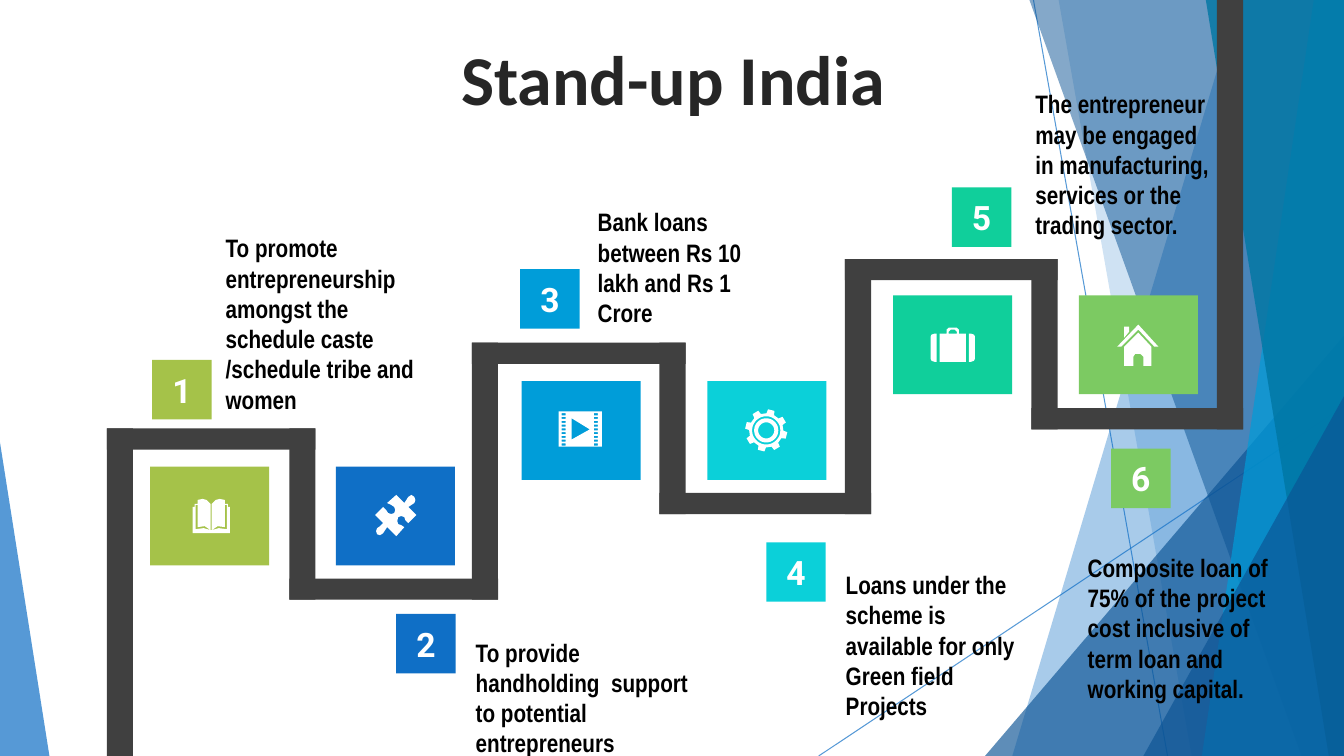
from math import cos, radians, sin

from lxml.etree import SubElement
from pptx import Presentation
from pptx.dml.color import RGBColor
from pptx.enum.shapes import MSO_CONNECTOR, MSO_SHAPE
from pptx.enum.text import MSO_ANCHOR, PP_ALIGN
from pptx.oxml.ns import qn
from pptx.util import Inches, Pt

BLUE = RGBColor(0x0F, 0x6F, 0xC6)
NAVY = RGBColor(0x0B, 0x53, 0x94)
SKY = RGBColor(0x00, 0x9D, 0xD9)
TEAL = RGBColor(0x00, 0x76, 0xA3)
LIME = RGBColor(0xA5, 0xC2, 0x49)
AQUA = RGBColor(0x0B, 0xD0, 0xD9)
MINT = RGBColor(0x10, 0xCF, 0x9B)
GREEN = RGBColor(0x7C, 0xCA, 0x62)
GRAY = RGBColor(0x40, 0x40, 0x40)
INK = RGBColor(0x26, 0x26, 0x26)
BLACK = RGBColor(0, 0, 0)
WHITE = RGBColor(255, 255, 255)

WIDE, HIGH = 13.33, 7.5
deck = Presentation()
deck.slide_width, deck.slide_height = Inches(WIDE), Inches(HIGH)
slide = deck.slides.add_slide(deck.slide_layouts[6])
shapes = slide.shapes


def paint(shape, color, alpha=100):
    shape.shadow.inherit = False
    shape.fill.solid()
    shape.fill.fore_color.rgb = color
    shape.line.fill.background()
    if alpha < 100:
        tint = shape.element.spPr.find(qn("a:solidFill"))[0]
        SubElement(tint, qn("a:alpha"), val=str(alpha * 1000))


def trace(loops, color, alpha=100):
    pen = None
    for loop in loops:
        dots = [(x * 1000, y * 1000) for x, y in loop]
        if pen:
            pen.move_to(*dots[0])
        else:
            pen = shapes.build_freeform(*dots[0], scale=Inches(1) / 1000)
        pen.add_line_segments(dots[1:], close=True)
    paint(pen.convert_to_shape(), color, alpha)


for ends in [(10.25, 0, 11.58, HIGH), (WIDE, 4.03, 8.12, HIGH)]:
    ray = shapes.add_connector(MSO_CONNECTOR.STRAIGHT, *map(Inches, ends))
    ray.line.color.rgb = BLUE
    ray.line.width = Pt(0.75)
    props = ray.element.spPr
    SubElement(props.find(qn("a:ln")).find(qn("a:solidFill"))[0], qn("a:alpha"), val="70000")
    SubElement(props, qn("a:effectLst"))

for top, base, color, alpha in [
    (12.28, 10.04, BLUE, 36),
    (10.5, 11.82, BLUE, 20),
    ((9.77, 3.33, 3.56, 4.17), 1, NAVY, 66),
    (10.21, 12.91, NAVY, 50),
    (13.03, 11.92, SKY, 70),
    (11.96, 13.18, TEAL, 80),
    ((11.34, 3.93, 1.99, 3.57), 1, NAVY, 66),
    ((0, 4.39, 0.49, 3.11), 0, BLUE, 70),
]:
    if isinstance(top, tuple):
        wedge = shapes.add_shape(MSO_SHAPE.ISOSCELES_TRIANGLE, *map(Inches, top))
        wedge.adjustments[0] = base
        paint(wedge, color, alpha)
    else:
        trace([[(top, 0), (WIDE, 0), (WIDE, HIGH), (base, HIGH)]], color, alpha)

THICK, POST = 0.21, 0.26
posts = [1.06, 2.87, 4.68, 6.54, 8.38, 10.23, 12.07]
floors = [HIGH - THICK, 4.25, 5.74, 3.4, 4.89, 2.57, 4.05, 0]
bars = [(x, min(a, b), POST, abs(a - b) + THICK) for x, a, b in zip(posts, floors, floors[1:])]
bars += [(a, y, b - a + POST, THICK) for a, b, y in zip(posts, posts[1:], floors[1:])]
for bar in bars:
    paint(shapes.add_shape(MSO_SHAPE.RECTANGLE, *map(Inches, bar)), GRAY)

steps = [
    (LIME, 1.51, 3.57, (2.14, 2.26, 2.07, 1.92),
     "To promote entrepreneurship amongst the schedule caste /schedule tribe and women"),
    (BLUE, 3.93, 6.09, (4.62, 6.27, 2.51, 1.31),
     "To provide handholding  support to potential entrepreneurs"),
    (SKY, 5.16, 2.67, (5.83, 2, 2.06, 1.31),
     "Bank loans between Rs 10 lakh and Rs 1 Crore"),
    (AQUA, 7.6, 5.38, (8.29, 5.6, 2.07, 1.61),
     "Loans under the scheme is available for only Green field Projects"),
    (MINT, 9.44, 1.86, (10.17, 0.83, 1.98, 1.62),
     "The entrepreneur may be engaged in manufacturing, services or the trading sector."),
    (GREEN, 11.02, 4.45, (10.69, 5.43, 2.07, 1.61),
     "Composite loan of 75% of the project cost inclusive of term loan and working capital."),
]
labels = [((0.35, 0.37, 12.66, 0.79), "Stand-up India", "Calibri", 50, INK, PP_ALIGN.CENTER)]
for k, (color, x, y, box, text) in enumerate(steps):
    card = (1.49 + 1.842 * k, 4.63 - 0.85 * (k // 2), 1.18, 0.98)
    chip = (x, y, 0.59, 0.59)
    for place in (card, chip):
        paint(shapes.add_shape(MSO_SHAPE.RECTANGLE, *map(Inches, place)), color)
    labels.append((chip, str(k + 1), "Roboto", 24, WHITE, PP_ALIGN.CENTER))
    labels.append((box, text, "Arial Narrow", 18, BLACK, PP_ALIGN.LEFT))

for box, text, face, size, color, align in labels:
    frame = shapes.add_textbox(*map(Inches, box)).text_frame
    frame.word_wrap = True
    frame.vertical_anchor = MSO_ANCHOR.TOP if align == PP_ALIGN.LEFT else MSO_ANCHOR.MIDDLE
    line = frame.paragraphs[0]
    line.text = text
    line.alignment = align
    if size == 50:
        line.space_before = Pt(10)
    font = line.font
    font.name, font.size, font.bold = face, Pt(size), True
    font.color.rgb = color

puzzle = [[
    (4.11, 4.93), (4.12, 4.96), (4.11, 4.99), (4.08, 5.01), (4.05, 5.03), (4.13, 5.11),
    (4.05, 5.19), (4.02, 5.16), (4.01, 5.13), (3.98, 5.12), (3.95, 5.13), (3.94, 5.17),
    (3.95, 5.2), (3.98, 5.21), (4.01, 5.23), (3.93, 5.32), (3.84, 5.23), (3.82, 5.26),
    (3.8, 5.29), (3.77, 5.31), (3.74, 5.3), (3.73, 5.27), (3.74, 5.24), (3.77, 5.22),
    (3.8, 5.19), (3.72, 5.11), (3.8, 5.03), (3.83, 5.06), (3.85, 5.09), (3.88, 5.1),
    (3.91, 5.09), (3.92, 5.06), (3.91, 5.03), (3.88, 5.01), (3.84, 4.99), (3.93, 4.91),
    (4.01, 4.99), (4.03, 4.96), (4.05, 4.93), (4.08, 4.91),
]]
book = [[
    (2.09, 5.26), (2.1, 5.26), (2.17, 5.24), (2.25, 5.25), (2.25, 5.01), (2.23, 5.01),
    (2.23, 5.23), (2.16, 5.22), (2.1, 5.26), (2.1, 5), (2.14, 4.96), (2.18, 4.95),
    (2.23, 4.96), (2.23, 5), (2.26, 5), (2.26, 5.03), (2.28, 5.03), (2.28, 5.29),
    (1.91, 5.29), (1.91, 5.03), (1.93, 5.03), (1.93, 5), (1.96, 5), (1.96, 4.96),
    (2.01, 4.95), (2.05, 4.96), (2.09, 5), (2.09, 5.26), (2.03, 5.22), (1.96, 5.23),
    (1.96, 5.01), (1.94, 5.01), (1.94, 5.25), (2.02, 5.24),
]]
house = [
    [(11.29, 3.3), (11.42, 3.44), (11.42, 3.63), (11.34, 3.63), (11.34, 3.54), (11.31, 3.51),
     (11.26, 3.51), (11.24, 3.54), (11.24, 3.63), (11.15, 3.63), (11.15, 3.44)],
    [(11.15, 3.24), (11.2, 3.24), (11.2, 3.29), (11.15, 3.35)],
    [(11.29, 3.22), (11.49, 3.44), (11.45, 3.44), (11.29, 3.27), (11.12, 3.44), (11.08, 3.44)],
]
case = [
    [(9.61, 3.31), (9.63, 3.31), (9.66, 3.32), (9.67, 3.34), (9.67, 3.56), (9.66, 3.58),
     (9.63, 3.59), (9.61, 3.59)],
    [(9.29, 3.31), (9.27, 3.31), (9.24, 3.32), (9.23, 3.34), (9.23, 3.56), (9.24, 3.58),
     (9.27, 3.59), (9.29, 3.59)],
    [(9.43, 3.27), (9.41, 3.29), (9.41, 3.31), (9.49, 3.31), (9.49, 3.29), (9.47, 3.27)],
    [(9.41, 3.25), (9.49, 3.25), (9.51, 3.27), (9.51, 3.31), (9.58, 3.31), (9.58, 3.59),
     (9.32, 3.59), (9.32, 3.31), (9.39, 3.31), (9.39, 3.27)],
]
film = [
    [(5.54, 4.08), (5.97, 4.08), (5.97, 4.43), (5.54, 4.43)],
    [(5.67, 4.15), (5.85, 4.26), (5.67, 4.36)],
]
for row in range(9):
    y = 4.1 + 0.3 * row / 8
    for x in (5.57, 5.89):
        film.append([(x, y), (x + 0.04, y), (x + 0.04, y + 0.02), (x, y + 0.02)])

teeth = [(45 * k + 14 + turn, far) for k in range(8)
         for turn, far in [(-13, 0.17), (-9, 0.21), (9, 0.21), (13, 0.17)]]
rings = [[(turn, far) for turn in range(0, 360, 10)] for far in (0.14, 0.12, 0.08)]
gear = [[(7.6 + far * cos(radians(turn)), 4.27 + far * sin(radians(turn))) for turn, far in ring]
        for ring in [teeth] + rings]

for icon in (puzzle, book, house, film, case, gear):
    trace(icon, WHITE)

deck.save("out.pptx")
